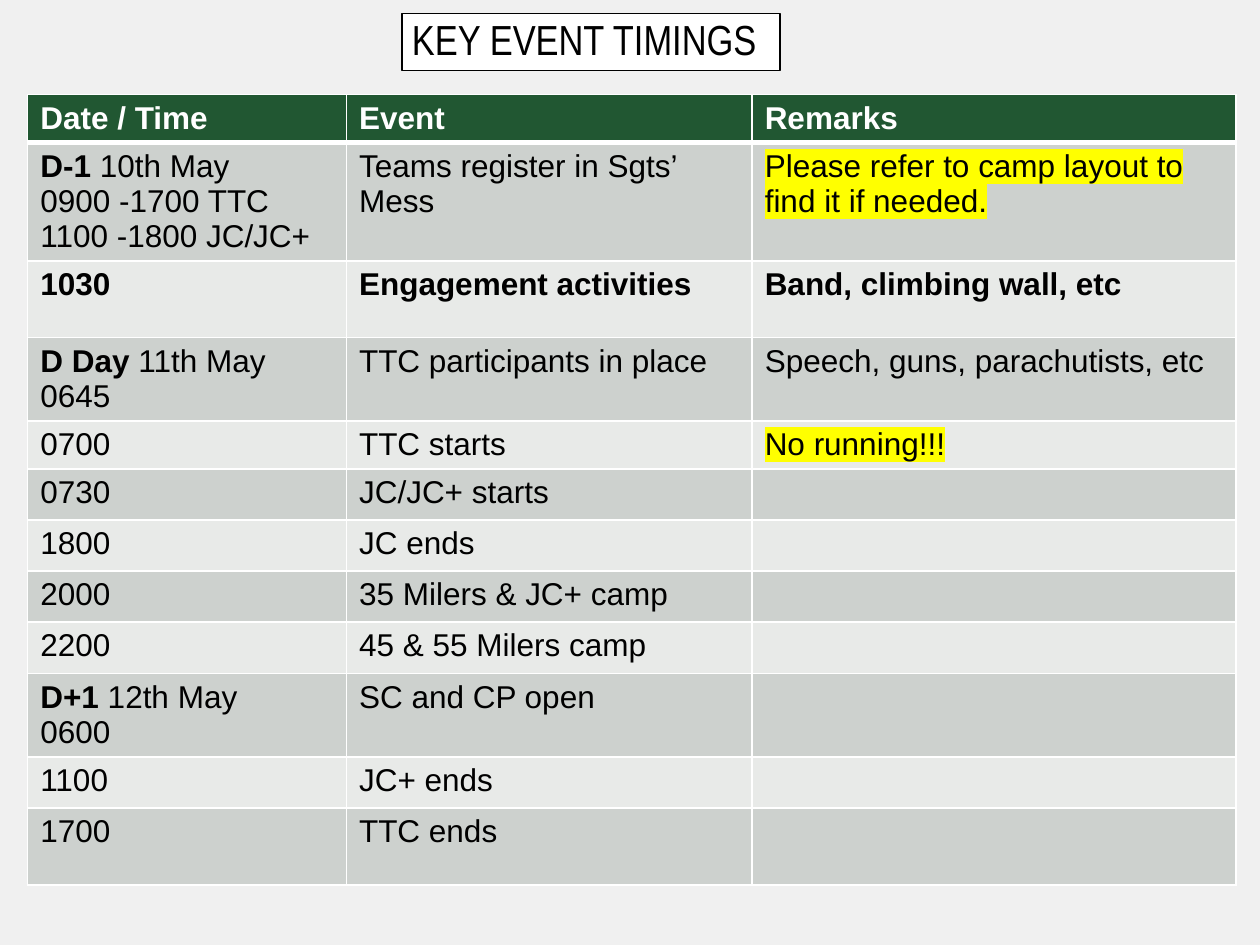
from lxml.etree import SubElement
from pptx import Presentation
from pptx.dml.color import RGBColor
from pptx.enum.shapes import MSO_SHAPE as Shape
from pptx.enum.text import MSO_ANCHOR as Anchor, PP_ALIGN as Align
from pptx.oxml.ns import qn
from pptx.util import Inches, Pt

BLACK, WHITE, YELLOW = "000000", "FFFFFF", "FFFF00"
PAGE, GREEN = "F0F0F0", "215732"
BANDS = ("CDD1CE", "E8EAE8")

COLUMN_WIDTHS = (2.53, 3.22, 3.84)
HEADINGS = ("Date / Time", "Event", "Remarks")
HEADER_HEIGHT, LINE_HEIGHT = 0.37, 0.38

# Each cell is a list of lines, each line a list of (text, style) runs.
PLAIN, BOLD, MARKED = "plain", "bold", "marked"


def line(text, style=PLAIN):
    return [(text, style)]


def day(label, date, *times):
    return [[(label + " ", BOLD), (date, PLAIN)], *map(line, times)]


def event(height, time, title, remark="", style=PLAIN, remark_style=None):
    remarks = [line(remark, remark_style or style)] if remark else []
    return height, ([line(time, style)], [line(title, style)], remarks)


def day_event(height, when, title, remark="", remark_style=PLAIN):
    return height, (when, *event(height, "", title, remark, remark_style=remark_style)[1][1:])


SCHEDULE = [
    day_event(0.93, day("D-1", "10th May", "0900 -1700 TTC", "1100 -1800 JC/JC+"),
              "Teams register in Sgts’ Mess",
              "Please refer to camp layout to find it if needed.", MARKED),
    event(0.61, "1030", "Engagement activities", "Band, climbing wall, etc", BOLD),
    day_event(0.66, day("D Day", "11th May", "0645"),
              "TTC participants in place", "Speech, guns, parachutists, etc"),
    event(LINE_HEIGHT, "0700", "TTC starts", "No running!!!", remark_style=MARKED),
    event(LINE_HEIGHT, "0730", "JC/JC+ starts"),
    event(LINE_HEIGHT, "1800", "JC ends"),
    event(LINE_HEIGHT, "2000", "35 Milers & JC+ camp"),
    event(0.41, "2200", "45 & 55 Milers camp"),
    day_event(0.66, day("D+1", "12th May", "0600"), "SC and CP open"),
    event(0.4, "1100", "JC+ ends"),
    event(0.61, "1700", "TTC ends"),
]


def paint(color_format, color):
    color_format.rgb = RGBColor.from_string(color)


def fill_with(fill, color):
    fill.solid()
    paint(fill.fore_color, color)


def add_run(paragraph, text, size, font_name, color, bold=False, highlight=None):
    run = paragraph.add_run()
    run.text = text
    font = run.font
    font.size, font.bold = Pt(size), bold
    fill_with(font.fill, color)
    if highlight:
        mark = SubElement(run._r.get_or_add_rPr(), qn("a:highlight"))
        SubElement(mark, qn("a:srgbClr"), val=highlight)
    font.name = font_name


def add_title(slide, text):
    box = slide.shapes.add_shape(Shape.RECTANGLE, Inches(3.19), Inches(0.11),
                                 Inches(3), Inches(0.45))
    box.shadow.inherit = False
    fill_with(box.fill, WHITE)
    fill_with(box.line.fill, BLACK)
    box.line.width = Pt(0.75)
    frame = box.text_frame
    frame.word_wrap = True
    frame.vertical_anchor = Anchor.MIDDLE
    frame.margin_left = frame.margin_right = Inches(0.08)
    frame.margin_top = frame.margin_bottom = Inches(0.04)
    paragraph = frame.paragraphs[0]
    paragraph.alignment, paragraph.line_spacing = Align.LEFT, 0.9
    add_run(paragraph, text, 24, "Arial Narrow", BLACK)


def add_borders(cell, top=1, bottom=1):
    properties = cell._tc.get_or_add_tcPr()
    for side, width in (("L", 1), ("R", 1), ("T", top), ("B", bottom)):
        border = SubElement(properties, qn(f"a:ln{side}"), w=str(Pt(width)))
        SubElement(SubElement(border, qn("a:solidFill")), qn("a:srgbClr"), val=WHITE)


def write_cell(cell, lines, background, color=BLACK, **border_widths):
    add_borders(cell, **border_widths)
    fill_with(cell.fill, background)
    frame = cell.text_frame
    for index, runs in enumerate(lines):
        paragraph = frame.add_paragraph() if index else frame.paragraphs[0]
        for text, style in runs:
            add_run(paragraph, text, 18, "Arial", color, style == BOLD,
                    YELLOW if style == MARKED else None)


def add_schedule(slide):
    heights = [HEADER_HEIGHT] + [height for height, _ in SCHEDULE]
    table = slide.shapes.add_table(
        len(heights), len(COLUMN_WIDTHS), Inches(0.22), Inches(0.75),
        Inches(sum(COLUMN_WIDTHS)), Inches(sum(heights))).table
    for column, width in zip(table.columns, COLUMN_WIDTHS):
        column.width = Inches(width)
    for row, height in zip(table.rows, heights):
        row.height = Inches(height)

    for column, heading in enumerate(HEADINGS):
        write_cell(table.cell(0, column), [line(heading, BOLD)], GREEN, WHITE, bottom=3)
    for row, (_, contents) in enumerate(SCHEDULE, start=1):
        for column, lines in enumerate(contents):
            write_cell(table.cell(row, column), lines, BANDS[(row - 1) % 2],
                       top=3 if row == 1 else 1)


def main():
    deck = Presentation()
    deck.slide_width, deck.slide_height = Inches(10), Inches(7.5)
    slide = deck.slides.add_slide(deck.slide_layouts[6])
    fill_with(slide.background.fill, PAGE)
    add_title(slide, "KEY EVENT TIMINGS")
    add_schedule(slide)
    deck.save("out.pptx")


if __name__ == "__main__":
    main()
